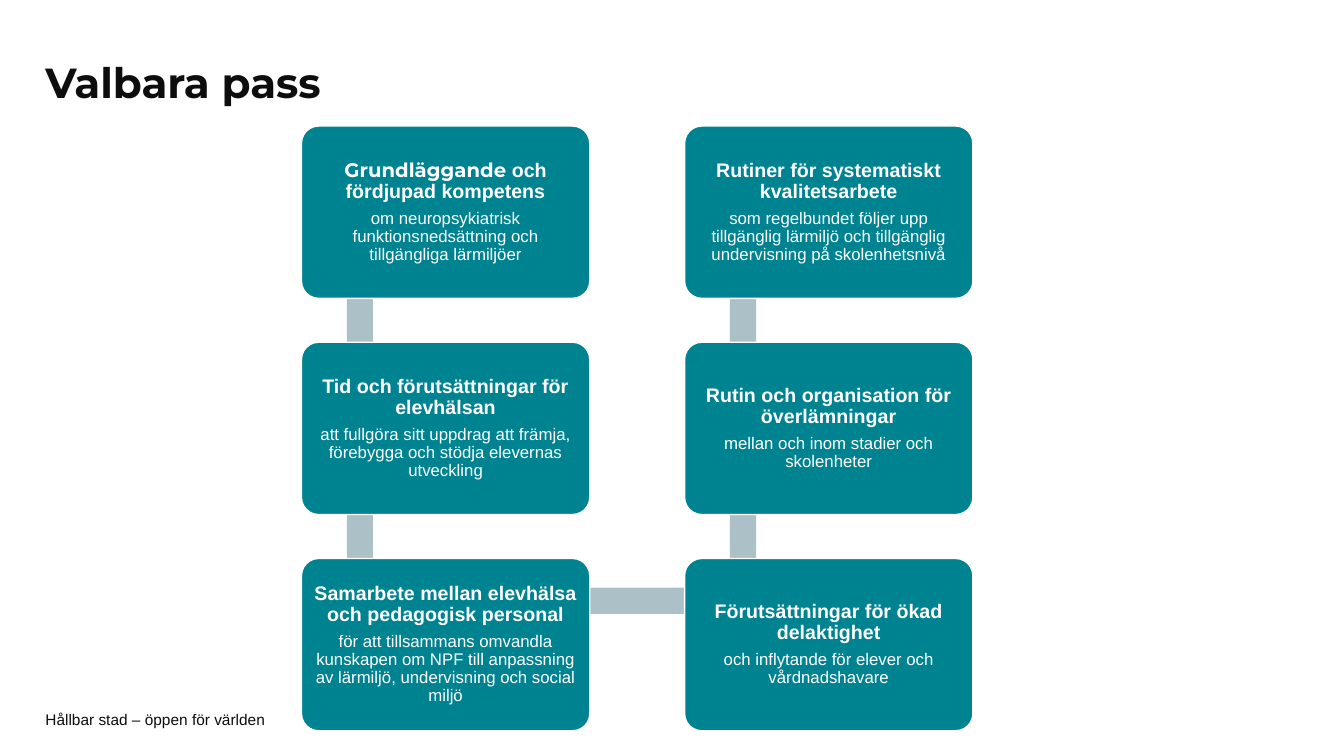
from pptx import Presentation
from pptx.dml.color import RGBColor
from pptx.enum.shapes import MSO_SHAPE
from pptx.enum.text import MSO_ANCHOR, MSO_AUTO_SIZE, PP_ALIGN
from pptx.util import Inches, Pt

INK, WHITE, TEAL, GREY = "0D0D0D", "FFFFFF", "008391", "ABC1C7"
WIDE, HIGH, BAR = 2.86, 1.71, 0.26
LEFTS = [2.99, 6.79]
TOP, STEP = 1.25, 2.145
COLUMNS = [
    [
        ("Grundläggande och fördjupad kompetens",
         "om neuropsykiatrisk funktionsnedsättning och tillgängliga lärmiljöer"),
        ("Tid och förutsättningar för elevhälsan",
         "att fullgöra sitt uppdrag att främja, förebygga och stödja elevernas utveckling"),
        ("Samarbete mellan elevhälsa och pedagogisk personal",
         "för att tillsammans omvandla kunskapen om NPF till anpassning av lärmiljö, "
         "undervisning och social miljö"),
    ],
    [
        ("Rutiner för systematiskt kvalitetsarbete",
         "som regelbundet följer upp tillgänglig lärmiljö och tillgänglig undervisning "
         "på skolenhetsnivå"),
        ("Rutin och organisation för överlämningar",
         "mellan och inom stadier och skolenheter"),
        ("Förutsättningar för ökad delaktighet",
         "och inflytande för elever och vårdnadshavare"),
    ],
]


def style(font, name, size, color, bold=False):
    font.name, font.size, font.bold = name, Pt(size), bold
    font.color.rgb = RGBColor.from_string(color)


def block(kind, left, top, width, height, fill):
    shape = slide.shapes.add_shape(
        kind, Inches(left), Inches(top), Inches(width), Inches(height))
    shape.shadow.inherit = False
    shape.fill.solid()
    shape.fill.fore_color.rgb = RGBColor.from_string(fill)
    shape.line.fill.background()
    return shape


deck = Presentation()
deck.slide_width, deck.slide_height = Inches(13.33), Inches(7.5)
slide = deck.slides.add_slide(deck.slide_layouts[5])

# Title and footer
title = slide.shapes.title
title.left, title.top = Inches(0.45), Inches(0.44)
title.width, title.height = Inches(10.03), Inches(0.81)
footer = slide.shapes.add_textbox(Inches(0.45), Inches(7.06), Inches(9.45), Inches(0.16))
for box, words, name, size, bold, pad in [
    (title, "Valbara pass", "Montserrat", 30, True, 0.05),
    (footer, "Hållbar stad – öppen för världen", "Arial", 11, False, 0),
]:
    frame = box.text_frame
    frame.text = words
    frame.word_wrap = True
    frame.auto_size = MSO_AUTO_SIZE.NONE
    frame.vertical_anchor = MSO_ANCHOR.MIDDLE
    frame.margin_left = frame.margin_right = 0
    frame.margin_top = frame.margin_bottom = Inches(pad)
    para = frame.paragraphs[0]
    para.alignment = PP_ALIGN.LEFT
    style(para.font, name, size, INK, bold)
title.text_frame.paragraphs[0].line_spacing = 0.9

# Path behind the cards
for left in LEFTS:
    for row in range(2):
        block(MSO_SHAPE.RECTANGLE, left + 0.45, TOP + row * STEP + 0.44, BAR, 2.13, GREY)
block(MSO_SHAPE.RECTANGLE, 3.57, 5.83, 3.79, BAR, GREY)

# Cards
for left, cards in zip(LEFTS, COLUMNS):
    for row, (head, body) in enumerate(cards):
        card = block(MSO_SHAPE.ROUNDED_RECTANGLE, left, TOP + row * STEP, WIDE, HIGH, TEAL)
        card.adjustments[0] = 0.1
        card.line.color.rgb = RGBColor.from_string(WHITE)
        card.line.width = Pt(1)
        frame = card.text_frame
        frame.word_wrap = True
        frame.vertical_anchor = MSO_ANCHOR.MIDDLE
        frame.margin_left = frame.margin_right = Inches(0.06)
        frame.margin_top = frame.margin_bottom = Inches(0.06)
        first, second = frame.paragraphs[0], frame.add_paragraph()
        for para in (first, second):
            para.alignment = PP_ALIGN.CENTER
            para.line_spacing = 0.9
        first.space_after = Pt(5)
        style(first.font, "Arial", 14, WHITE, True)
        style(second.font, "Arial", 12, WHITE)
        second.text = body
        start, gap, rest = head.partition(" ")
        if start == "Grundläggande":
            run = first.add_run()
            run.text = start
            run.font.name = "Montserrat"
            first.add_run().text = gap + rest
        else:
            first.text = head

deck.save("out.pptx")
